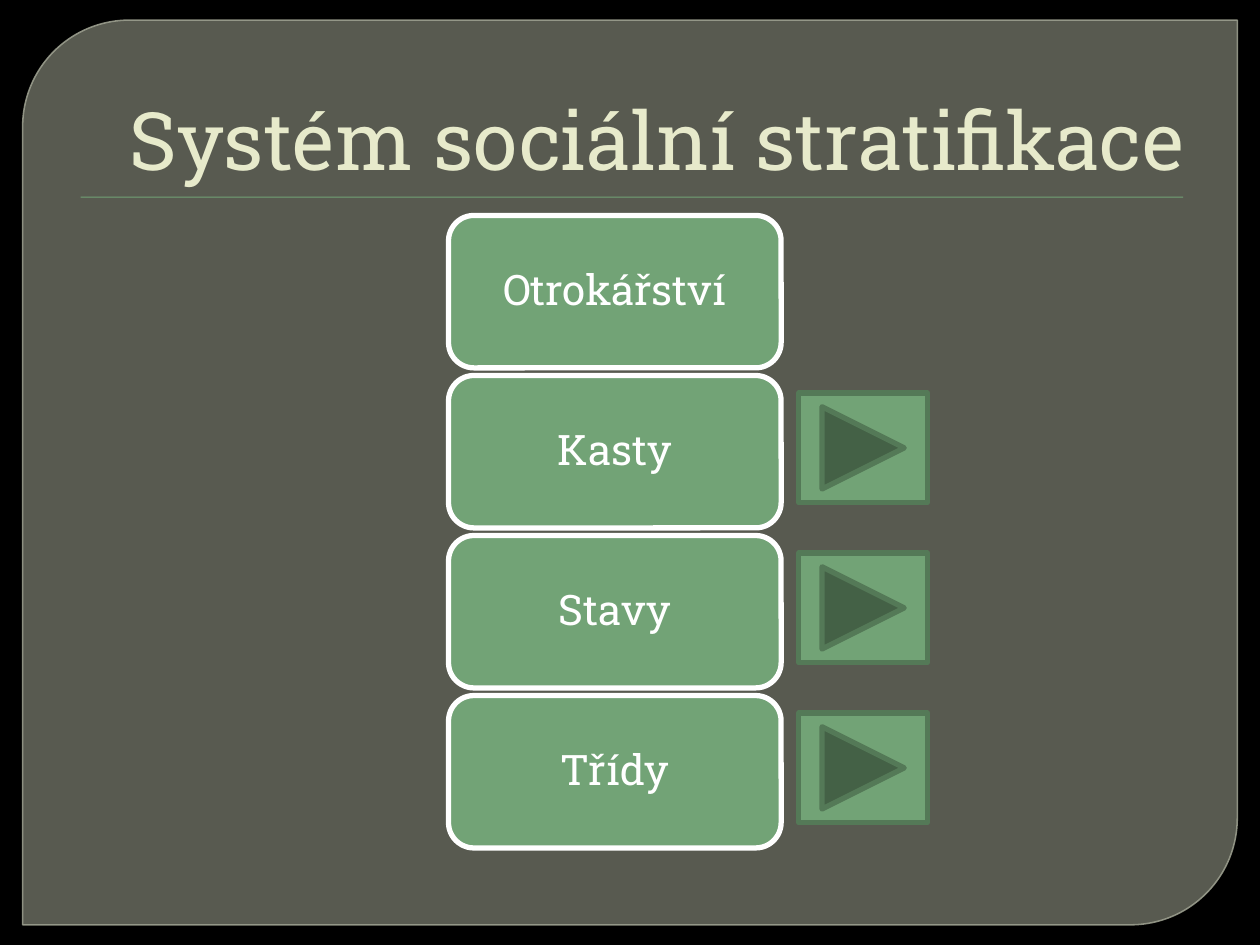
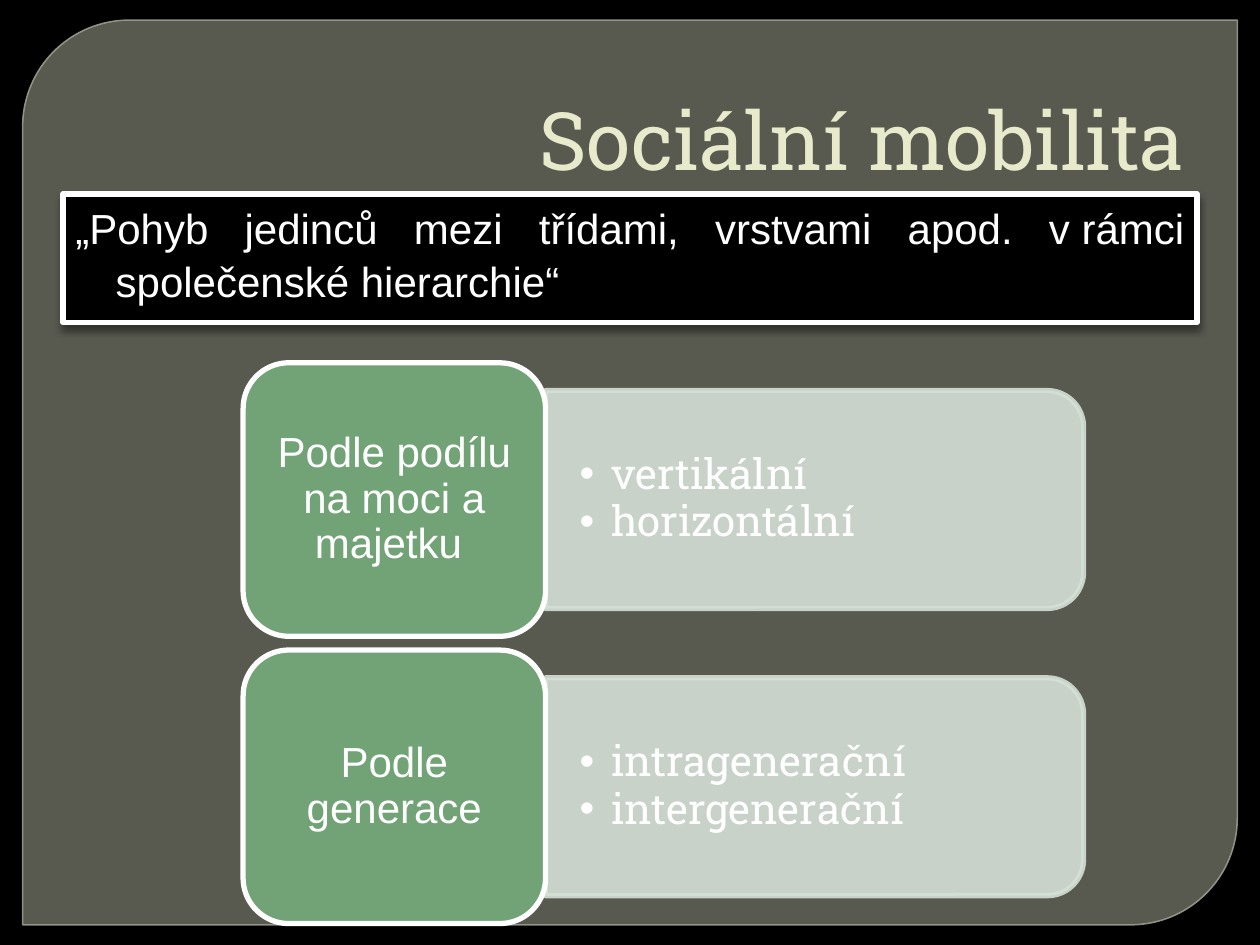
from lxml import etree
from pptx import Presentation
from pptx import util as u
from pptx.dml.color import RGBColor
from pptx.enum import shapes, text
from pptx.oxml.ns import qn

STRATA = [("Otrokářství", False), ("Kasty", True), ("Stavy", True), ("Třídy", True)]
DEFINITION = "„Pohyb jedinců mezi třídami, vrstvami apod. v\u00a0rámci společenské hierarchie“"
MOBILITY = [
    ("Podle podílu na moci a majetku ", ["vertikální", "horizontální"]),
    ("Podle generace", ["intragenerační", "intergenerační"]),
]

BLACK = RGBColor(0x00, 0x00, 0x00)
WHITE = RGBColor(0xFF, 0xFF, 0xFF)
PANEL = RGBColor(0x88, 0x8B, 0x7B)
PANEL_EDGE = RGBColor(0x9D, 0xA0, 0x90)
GREEN = RGBColor(0x72, 0xA3, 0x76)
DARK_GREEN = RGBColor(0x54, 0x79, 0x57)
PALE_GREEN = RGBColor(0xD5, 0xE0, 0xD6)
TITLE_COLOR = RGBColor(0xE7, 0xEA, 0xCB)

SLAB, SANS = "Roboto Slab", "Arial"
WIDTH, HEIGHT = 10, 7.5
MARGIN = 0.5
CONTENT_WIDTH = WIDTH - 2 * MARGIN
BODY_SIZE = 24
KIND = shapes.MSO_SHAPE
ALIGN = text.PP_ALIGN


def inches(*lengths):
    return [u.Inches(length) for length in lengths]


def set_alpha(color_parent, percent):
    color = color_parent.find(".//" + qn("a:srgbClr"))
    etree.SubElement(color, qn("a:alpha"), val=str(percent * 1000))


def add_shape(page, kind, place, fill, line=None, weight=3, fill_alpha=None, line_alpha=None):
    shape = page.shapes.add_shape(kind, *inches(*place))
    shape.shadow.inherit = False
    shape.fill.solid()
    shape.fill.fore_color.rgb = fill
    properties = shape._element.spPr
    if fill_alpha:
        set_alpha(properties.find(qn("a:solidFill")), fill_alpha)
    if line is None:
        shape.line.fill.background()
    else:
        shape.line.color.rgb = line
        shape.line.width = u.Pt(weight)
        if line_alpha:
            set_alpha(properties.find(qn("a:ln")), line_alpha)
    return shape


def drop_shadow(shape, alpha, blur, distance):
    effects = shape._element.spPr.find(qn("a:effectLst"))
    shadow = etree.SubElement(
        effects, qn("a:outerShdw"), blurRad=str(u.Pt(blur)), dist=str(u.Pt(distance)),
        dir="5400000", algn="t", rotWithShape="0")
    etree.SubElement(shadow, qn("a:srgbClr"), val=str(BLACK))
    set_alpha(shadow, alpha)


def indent(para, left, first):
    properties = para._p.get_or_add_pPr()
    properties.set("marL", str(u.Inches(left)))
    properties.set("indent", str(u.Inches(first)))
    return properties


def write(shape, lines, font=SLAB, size=BODY_SIZE, color=WHITE, align=ALIGN.CENTER,
          anchor=text.MSO_ANCHOR.MIDDLE, spacing=0.9):
    frame = shape.text_frame
    frame.word_wrap = True
    frame.vertical_anchor = anchor
    for index, line in enumerate(lines):
        para = frame.add_paragraph() if index else frame.paragraphs[0]
        para.alignment = align
        para.line_spacing = spacing
        span = para.add_run()
        span.text = line
        span.font.name = font
        span.font.size = u.Pt(size)
        span.font.color.rgb = color
    return frame.paragraphs


def add_page(deck, title):
    page = deck.slides.add_slide(deck.slide_layouts[6])
    page.background.fill.solid()
    page.background.fill.fore_color.rgb = BLACK
    panel = add_shape(page, KIND.ROUND_2_DIAG_RECTANGLE, (0.18, 0.16, 9.64, 7.18),
                      PANEL, PANEL_EDGE, 0.87, 65, 88)
    panel.adjustments[0], panel.adjustments[1] = 0.118, 0
    rule = add_shape(page, KIND.RECTANGLE, (0.64, 1.56, 8.75, 0.01), GREEN)
    drop_shadow(rule, 75, 1, 1)
    box = page.shapes.add_textbox(*inches(MARGIN, 0.28, CONTENT_WIDTH, 1.25))
    paras = write(box, [title], size=46, color=TITLE_COLOR, align=ALIGN.RIGHT,
                  anchor=text.MSO_ANCHOR.BOTTOM, spacing=1.0)
    indent(paras[0], 0.06, 0)
    return page


def add_strata(page):
    left, top, width, height, pitch = 3.56, 1.71, 2.64, 1.21, 1.27
    button_width, button_height = 1.02, 0.87
    for row, (name, has_button) in enumerate(STRATA):
        y = top + row * pitch
        box = add_shape(page, KIND.ROUNDED_RECTANGLE, (left, y, width, height), GREEN, WHITE)
        write(box, [name])
        if has_button:
            place = (left + width + 0.14, y + 0.14, button_width, button_height)
            add_shape(page, KIND.ACTION_BUTTON_FORWARD_OR_NEXT, place, GREEN, DARK_GREEN)


def add_definition(page):
    box = add_shape(page, KIND.RECTANGLE, (MARGIN, 1.54, CONTENT_WIDTH, 1.02), BLACK, WHITE)
    drop_shadow(box, 43, 4, 3)
    paras = write(box, [DEFINITION], font=SANS, align=ALIGN.JUSTIFY,
                  anchor=text.MSO_ANCHOR.TOP, spacing=1.05)
    indent(paras[0], 0.32, -0.32)


def add_kinds(page, place, kinds):
    left, top, width, height = place
    panel_place = (left + (width - height) / 2, top - (width - height) / 2, height, width)
    panel = add_shape(page, KIND.ROUND_2_SAME_RECTANGLE, panel_place,
                      PALE_GREEN, PALE_GREEN, 3, 90, 90)
    panel.rotation = 90
    box = page.shapes.add_textbox(*inches(left, top + 0.08, width - 0.08, height - 0.16))
    frame = box.text_frame
    frame.margin_left = frame.margin_right = u.Inches(0.27)
    frame.margin_top = frame.margin_bottom = u.Inches(0.14)
    for para in write(box, kinds, align=ALIGN.LEFT):
        para.space_after = u.Pt(1.2)
        properties = indent(para, 0.25, -0.25)
        etree.SubElement(properties, qn("a:buFont"), typeface=SANS)
        etree.SubElement(properties, qn("a:buChar"), char="•")


def add_mobility(page):
    left, top, width, height, pitch = 1.93, 2.88, 2.4, 2.17, 2.28
    kinds_width, kinds_height = 4.27, 1.73
    for row, (criterion, kinds) in enumerate(MOBILITY):
        y = top + row * pitch
        kinds_top = y + (height - kinds_height) / 2
        add_kinds(page, (left + width, kinds_top, kinds_width, kinds_height), kinds)
        box = add_shape(page, KIND.ROUNDED_RECTANGLE, (left, y, width, height), GREEN, WHITE)
        write(box, [criterion], font=SANS)


def main():
    deck = Presentation()
    deck.slide_width, deck.slide_height = inches(WIDTH, HEIGHT)
    add_strata(add_page(deck, "Systém sociální stratifikace"))
    page = add_page(deck, "Sociální mobilita")
    add_definition(page)
    add_mobility(page)
    deck.save("out.pptx")


if __name__ == "__main__":
    main()
